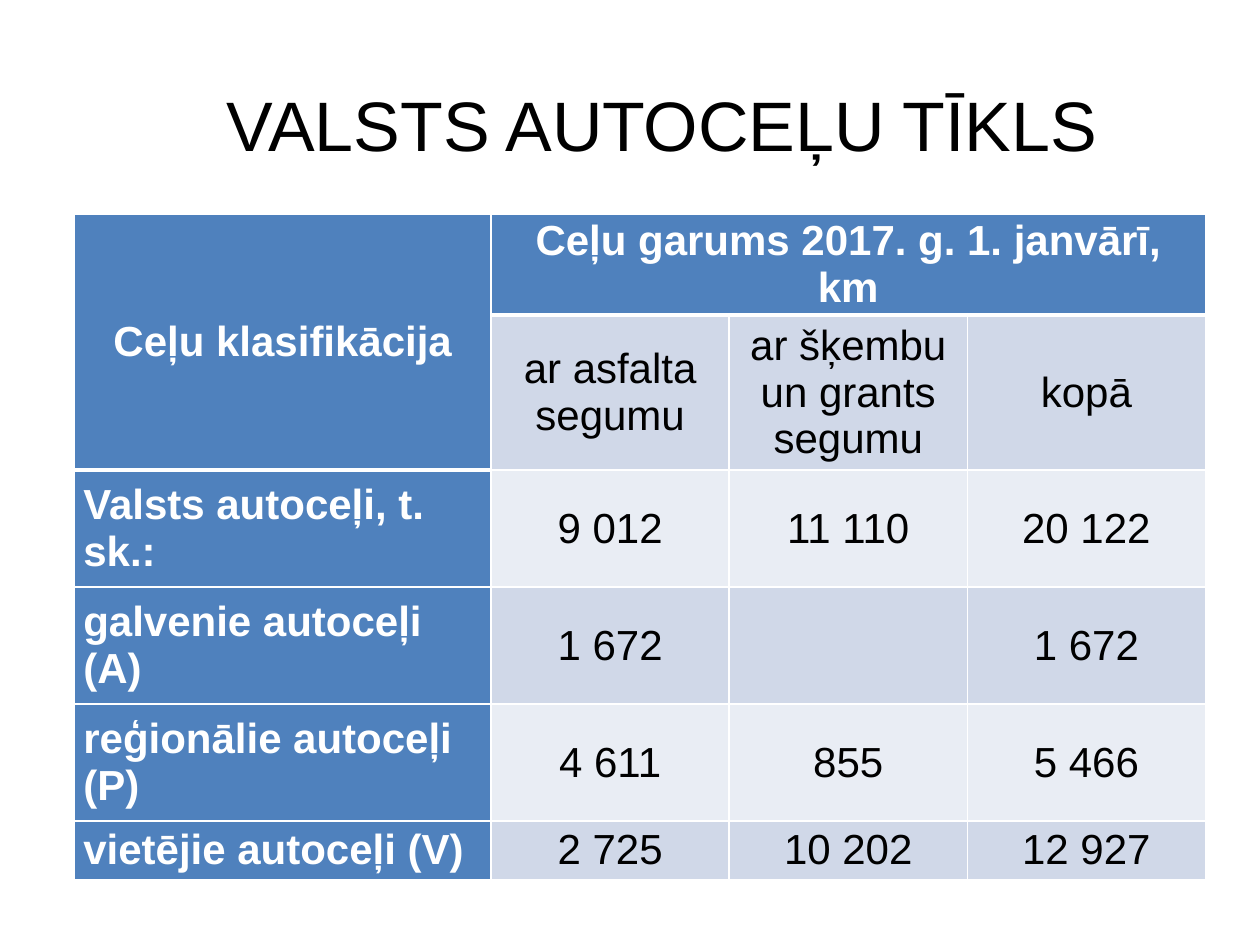
from lxml.etree import SubElement
from pptx import Presentation
from pptx.dml.color import RGBColor
from pptx.enum.text import MSO_ANCHOR, MSO_AUTO_SIZE, PP_ALIGN
from pptx.oxml.ns import qn
from pptx.util import Cm, Pt

TITLE = "VALSTS AUTOCEĻU TĪKLS"
ROWS = [
    ["Ceļu klasifikācija", "Ceļu garums 2017. g. 1. janvārī, km", "", ""],
    ["", "ar asfalta segumu", "ar šķembu un grants segumu", "kopā"],
    ["Valsts autoceļi, t. sk.:", "9 012", "11 110", "20 122"],
    ["galvenie autoceļi (A)", "1 672", "", "1 672"],
    ["reģionālie autoceļi (P)", "4 611", "855", "5 466"],
    ["vietējie autoceļi (V)", "2 725", "10 202", "12 927"],
]
COLUMN_WIDTHS = [8.4, 4.8, 4.8, 4.8]
ROW_HEIGHTS = [1.4, 3.12, 2.36, 2.36, 2.36, 1.18]
HEADER_ROWS = 2

FONT = "Arial"
BLACK = RGBColor(0x00, 0x00, 0x00)
WHITE = RGBColor(0xFF, 0xFF, 0xFF)
BLUE = RGBColor(0x4F, 0x81, 0xBD)
BANDS = [RGBColor(0xE9, 0xED, 0xF4), RGBColor(0xD0, 0xD8, 0xE8)]


def set_font(paragraph, size, color, bold=False):
    font = paragraph.font
    font.name, font.size, font.bold = FONT, Pt(size), bold
    font.color.rgb = color


def add_border(cell, side, points):
    line = SubElement(cell._tc.get_or_add_tcPr(), qn(f"a:ln{side}"), w=str(Pt(points)))
    fill = SubElement(line, qn("a:solidFill"))
    SubElement(fill, qn("a:srgbClr"), val=str(WHITE))


def format_cell(cell, row, column, text):
    header_end = HEADER_ROWS if column == 0 else 1
    is_header = column == 0 or row == 0
    add_border(cell, "L", 1)
    add_border(cell, "R", 1)
    add_border(cell, "T", 3 if row == header_end else 1)
    add_border(cell, "B", 3 if row < header_end else 1)
    cell.fill.solid()
    cell.fill.fore_color.rgb = BLUE if is_header else BANDS[row % 2]
    cell.margin_left = cell.margin_right = Cm(0.18)
    cell.margin_top = cell.margin_bottom = 0
    cell.vertical_anchor = MSO_ANCHOR.MIDDLE
    cell.text = text
    paragraph = cell.text_frame.paragraphs[0]
    is_row_label = column == 0 and row >= HEADER_ROWS
    paragraph.alignment = PP_ALIGN.LEFT if is_row_label else PP_ALIGN.CENTER
    set_font(paragraph, 24, WHITE if is_header else BLACK, is_header)


def add_road_table(page):
    table = page.shapes.add_table(
        len(ROWS), len(COLUMN_WIDTHS), Cm(1.5), Cm(4.32),
        Cm(sum(COLUMN_WIDTHS)), Cm(sum(ROW_HEIGHTS))).table
    for column, width in zip(table.columns, COLUMN_WIDTHS):
        column.width = Cm(width)
    for row, height in zip(table.rows, ROW_HEIGHTS):
        row.height = Cm(height)
    for row, texts in enumerate(ROWS):
        for column, text in enumerate(texts):
            format_cell(table.cell(row, column), row, column, text)
    table.cell(0, 0).merge(table.cell(HEADER_ROWS - 1, 0))
    table.cell(0, 1).merge(table.cell(0, len(COLUMN_WIDTHS) - 1))


def add_title(page):
    title = page.shapes.title
    title.left, title.top, title.width, title.height = Cm(4.32), Cm(1.52), Cm(18.24), Cm(1.96)
    frame = title.text_frame
    frame.text = TITLE
    frame.word_wrap = False
    frame.auto_size = MSO_AUTO_SIZE.SHAPE_TO_FIT_TEXT
    frame.vertical_anchor = MSO_ANCHOR.TOP
    paragraph = frame.paragraphs[0]
    paragraph.alignment = PP_ALIGN.LEFT
    set_font(paragraph, 40, BLACK)


def main():
    deck = Presentation()
    deck.slide_width, deck.slide_height = Cm(25.4), Cm(19.05)
    page = deck.slides.add_slide(deck.slide_layouts[5])
    add_title(page)
    add_road_table(page)
    deck.save("out.pptx")


if __name__ == "__main__":
    main()
